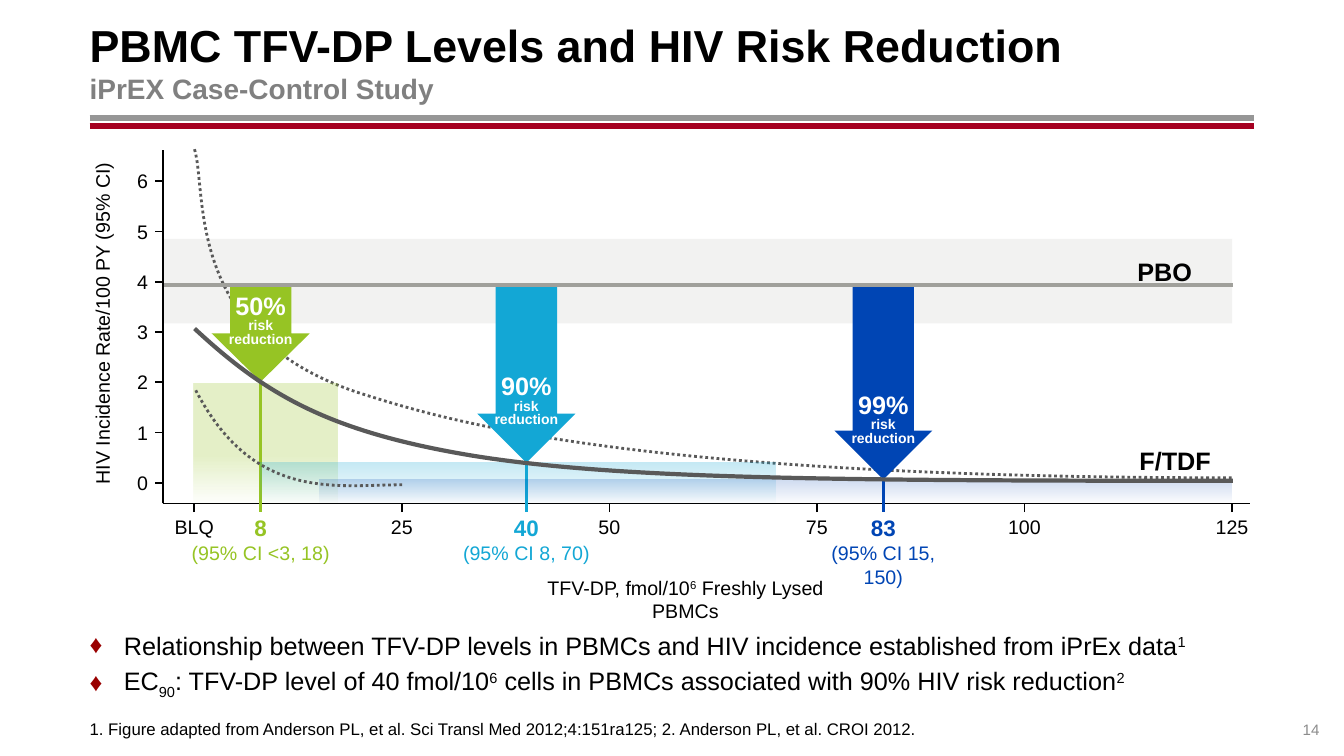
from lxml import etree
from pptx import Presentation
from pptx import util as u
from pptx.dml import color as dml
from pptx.enum import dml as dash, shapes, text
from pptx.oxml import ns

COLORS = {
    "black": "000000", "white": "FFFFFF", "subtitle": "808080", "number": "8C8C8C",
    "rule_gray": "969696", "rule_red": "A50021", "bullet": "990000",
    "band": "D4D4D2", "placebo": "A0A09B", "curve": "595959",
    "green": "96C424", "cyan": "13A7D5", "blue": "0045B4",
}
FONT = "Arial"
LEFT, CENTER, RIGHT = text.PP_ALIGN.LEFT, text.PP_ALIGN.CENTER, text.PP_ALIGN.RIGHT
TOP, MIDDLE, BOTTOM = text.MSO_ANCHOR.TOP, text.MSO_ANCHOR.MIDDLE, text.MSO_ANCHOR.BOTTOM

# Plot scales, in points
AXIS_LEFT, AXIS_RIGHT, AXIS_BOTTOM = 116.2, 892.8, 359.6
PLACEBO_Y, TICK_END = 203.8, 365.8

# Level, reduction, interval, colour, tip y, text inset, range (left, right, top),
# first gradient stop, opacity
DOSES = [
    (8, "50%", "(95% CI <3, 18)", "green", 272.6, 0, (138.2, 240.8, 274.3), 0.6, 25),
    (40, "90%", "(95% CI 8, 70)", "cyan", 330.5, 57.6, (185.8, 553.7, 330.5), 0, 25),
    (83, "99%", "(95% CI 15, 150)", "blue", 342.5, 72, (228.2, 879.8, 342.7), 0, 20),
]

# Cubic curves: start point, then three points per segment
UPPER_LIMIT = [(139, 106.6), (148.3, 138.2), (131, 239.8), (257, 280.8),
               (318.2, 300.2), (449.3, 341.3), (880.6, 341.3)]
INCIDENCE = [(139, 234.7), (189.4, 281.5), (234, 308.2), (337, 325.4),
             (439.2, 342), (588.2, 343.4), (880.6, 343.4)]
LOWER_LIMIT = [(287.3, 346.3), (239, 346.3), (180.7, 358.6), (139, 277.2)]


def level_x(level):
    return 138.8 + 5.93 * level


def rate_y(rate):
    return 344.9 - 35.9 * rate


def rgb(name):
    return dml.RGBColor.from_string(COLORS[name])


def format_run(run, size, color="black", bold=False):
    run.font.name, run.font.size, run.font.bold = FONT, u.Pt(size), bold
    run.font.color.rgb = rgb(color)


def format_runs(paragraph, *style):
    for run in paragraph.runs:
        format_run(run, *style)


def set_frame(frame, insets=(0, 0, 0, 0), anchor=TOP, wrap=True):
    frame.margin_left, frame.margin_top, frame.margin_right, frame.margin_bottom = map(u.Pt, insets)
    frame.vertical_anchor, frame.word_wrap = anchor, wrap


def add_label(slide, content, box, size, color="black", bold=False, align=LEFT, **frame_options):
    shape = slide.shapes.add_textbox(*map(u.Pt, box))
    set_frame(shape.text_frame, **frame_options)
    shape.text_frame.text = content
    for paragraph in shape.text_frame.paragraphs:
        paragraph.alignment = align
        format_runs(paragraph, size, color, bold)
    return shape


def write_scripts(paragraph, parts, size):
    """Fill a paragraph with (text, baseline percent) parts."""
    for content, baseline in parts:
        run = paragraph.add_run()
        run.text = content
        if baseline:
            run._r.get_or_add_rPr().set("baseline", str(baseline * 1000))
    format_runs(paragraph, size)


def add_line(slide, start, end, color="black", width=1.25):
    line = slide.shapes.add_connector(
        shapes.MSO_CONNECTOR.STRAIGHT, *map(u.Pt, (*start, *end)))
    line.line.color.rgb, line.line.width = rgb(color), u.Pt(width)
    etree.SubElement(line._element.spPr, ns.qn("a:effectLst"))
    return line


def add_block(slide, kind, box):
    shape = slide.shapes.add_shape(kind, *map(u.Pt, box))
    shape.shadow.inherit = False
    shape.line.fill.background()
    return shape


def set_opacity(shape, percents):
    for node, percent in zip(shape._element.spPr.iter(ns.qn("a:srgbClr")), percents):
        etree.SubElement(node, ns.qn("a:alpha")).set("val", str(percent * 1000))


def add_curve(slide, points, width, dotted=False):
    points = [(u.Pt(x), u.Pt(y)) for x, y in points]
    builder = slide.shapes.build_freeform(*points[0])
    builder.add_line_segments(points[1:], close=False)
    curve = builder.convert_to_shape()
    # Turn every three straight segments into one cubic segment
    segments = list(curve._element.spPr.iter(ns.qn("a:lnTo")))
    outline = segments[0].getparent()
    for first in range(0, len(segments), 3):
        cubic = etree.SubElement(outline, ns.qn("a:cubicBezTo"))
        for segment in segments[first:first + 3]:
            cubic.append(segment[0])
            outline.remove(segment)
    curve.shadow.inherit = False
    curve.fill.background()
    curve.line.color.rgb, curve.line.width = rgb("curve"), u.Pt(width)
    if dotted:
        curve.line.dash_style = dash.MSO_LINE.ROUND_DOT


def add_bullet(paragraph, parts):
    write_scripts(paragraph, parts, 18)
    paragraph.space_before = u.Pt(4)
    properties = paragraph._p.get_or_add_pPr()
    properties.set("marL", str(u.Pt(24.5)))
    properties.set("indent", str(u.Pt(-24.5)))
    bullet_color = etree.SubElement(properties, ns.qn("a:buClr"))
    etree.SubElement(bullet_color, ns.qn("a:srgbClr")).set("val", COLORS["bullet"])
    etree.SubElement(properties, ns.qn("a:buFont")).set("typeface", FONT)
    etree.SubElement(properties, ns.qn("a:buChar")).set("char", "♦")


def add_axes(slide):
    for rate in range(7):
        y = rate_y(rate)
        add_line(slide, (110.9, y), (AXIS_LEFT, y))
        add_label(slide, str(rate), (97.9, y - 8.6, 7.8, 16), 14, align=RIGHT, wrap=False)
    for level in range(0, 126, 25):
        x = level_x(level)
        add_line(slide, (x, TICK_END), (x, AXIS_BOTTOM))
        add_label(slide, str(level) if level else "BLQ", (x - 18, 367.9, 36, 16), 14,
                  align=CENTER, wrap=False)
    add_line(slide, (AXIS_LEFT, AXIS_BOTTOM), (AXIS_RIGHT, AXIS_BOTTOM))
    rate_title = add_label(slide, "HIV Incidence Rate/100 PY (95% CI)", (-42.5, 222.5, 231, 17),
                           14, align=CENTER)
    rate_title.rotation = 270
    level_title = add_label(slide, "", (376.6, 411.1, 226, 34), 14, align=CENTER)
    write_scripts(level_title.text_frame.paragraphs[0],
                  [("TFV-DP, fmol/10", 0), ("6", 30), (" Freshly Lysed PBMCs", 0)], 14)


def add_dose(slide, level, reduction, interval, color, tip, inset, span, first_stop, opacity):
    x = level_x(level)
    # Fading confidence range
    left, right, top = span
    area = add_block(slide, shapes.MSO_SHAPE.RECTANGLE, (left, top, right - left, AXIS_BOTTOM - top))
    area.fill.gradient()
    area.fill.gradient_angle = 270
    for stop, position in zip(area.fill.gradient_stops, (first_stop, 1)):
        stop.color.rgb, stop.position = rgb(color), position
    set_opacity(area, (opacity, 0))
    # Arrow with its stem
    arrow = add_block(slide, shapes.MSO_SHAPE.DOWN_ARROW, (x - 35, PLACEBO_Y, 70, tip - PLACEBO_Y))
    arrow.adjustments[0], arrow.adjustments[1] = 0.625, 0.5
    arrow.fill.solid()
    arrow.fill.fore_color.rgb = rgb(color)
    set_frame(arrow.text_frame, (0, inset, 0, 0), MIDDLE, wrap=False)
    arrow.text_frame.text = f"{reduction}\nrisk\nreduction"
    for index, paragraph in enumerate(arrow.text_frame.paragraphs):
        paragraph.alignment = CENTER
        if index:
            paragraph.line_spacing = 0.8
        format_runs(paragraph, 10 if index else 18, "white", True)
    stem = add_line(slide, (x, tip), (x, TICK_END), color, 2)
    stem.begin_connect(arrow, 2)
    # Level and interval
    label = add_label(slide, f"{level}\n{interval}", (x - 53, 367.2, 106, 36), 14, color,
                      align=CENTER, wrap=False)
    format_runs(label.text_frame.paragraphs[0], 16, color, True)


def main():
    presentation = Presentation()
    presentation.slide_width, presentation.slide_height = u.Pt(960), u.Pt(540)
    slide = presentation.slides.add_slide(presentation.slide_layouts[6])

    # Heading
    for y, color in ((84.5, "rule_gray"), (90.3, "rule_red")):
        add_line(slide, (64, y), (896, y), color, 4.25)
    title = add_label(slide, "PBMC TFV-DP Levels and HIV Risk Reduction\viPrEX Case-Control Study",
                      (64, 13, 832, 62), 32, bold=True, insets=(0, 3.6, 7.2, 3.6), anchor=MIDDLE)
    format_run(title.text_frame.paragraphs[0].runs[1], 20, "subtitle", True)

    # Plot
    band = add_block(slide, shapes.MSO_SHAPE.RECTANGLE, (AXIS_LEFT, 170.6, 764, 60.5))
    band.fill.solid()
    band.fill.fore_color.rgb = rgb("band")
    set_opacity(band, (30,))
    add_axes(slide)
    add_curve(slide, UPPER_LIMIT, 2, dotted=True)
    add_label(slide, "PBO", (812.4, 182.9, 65.5, 19.5), 18, bold=True)
    add_label(slide, "F/TDF", (813.9, 318.2, 67, 21), 18, bold=True)
    for dose in DOSES:
        add_dose(slide, *dose)
    add_curve(slide, INCIDENCE, 3)
    add_curve(slide, LOWER_LIMIT, 2, dotted=True)
    add_line(slide, (AXIS_LEFT, PLACEBO_Y), (880.6, PLACEBO_Y), "placebo", 3)
    add_line(slide, (AXIS_LEFT, AXIS_BOTTOM), (AXIS_LEFT, 107.3))

    # Findings
    findings = add_label(slide, "", (64, 446.4, 832, 62), 18, insets=(0, 3.6, 7.2, 3.6)).text_frame
    add_bullet(findings.paragraphs[0], [
        ("Relationship between TFV-DP levels in PBMCs and HIV incidence established from iPrEx data", 0),
        ("1", 30)])
    add_bullet(findings.add_paragraph(), [
        ("EC", 0), ("90", -25), (": TFV-DP level of 40 fmol/10", 0), ("6", 30),
        (" cells in PBMCs associated with 90% HIV risk reduction", 0), ("2", 30)])

    # Footer
    add_label(slide, "1. Figure adapted from Anderson PL, et al. Sci Transl Med 2012;4:151ra125; "
              "2. Anderson PL, et al. CROI 2012.", (64, 491.8, 832, 36), 12, anchor=BOTTOM)
    add_label(slide, "14", (895.7, 499, 46.8, 28.8), 10.8, "number", align=RIGHT, anchor=BOTTOM)

    presentation.save("out.pptx")


if __name__ == "__main__":
    main()
